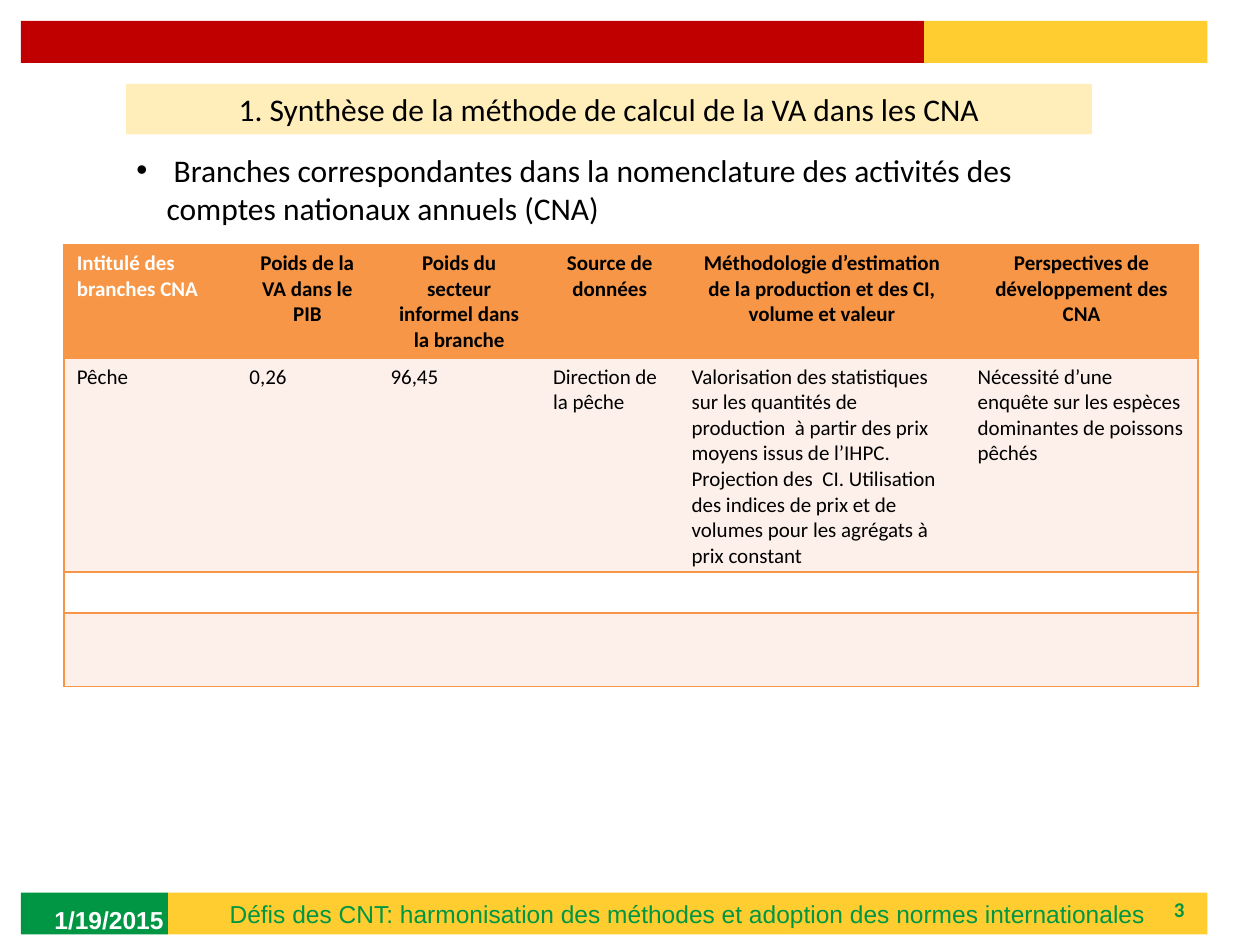
from lxml import etree
from pptx import Presentation
from pptx.dml.color import RGBColor
from pptx.enum.shapes import MSO_SHAPE
from pptx.enum.text import MSO_ANCHOR, PP_ALIGN
from pptx.oxml.ns import qn
from pptx.util import Inches, Pt

RECTANGLE = MSO_SHAPE.RECTANGLE
TOP, MIDDLE = MSO_ANCHOR.TOP, MSO_ANCHOR.MIDDLE
LEFT, CENTER, RIGHT = PP_ALIGN.LEFT, PP_ALIGN.CENTER, PP_ALIGN.RIGHT

GREEN = RGBColor(0x00, 0x96, 0x44)
YELLOW = RGBColor(0xFF, 0xCD, 0x2F)
RED = RGBColor(0xC0, 0x00, 0x00)
CREAM = RGBColor(0xFF, 0xEE, 0xB9)
ORANGE = RGBColor(0xF7, 0x96, 0x46)
BLUSH = RGBColor(0xFD, 0xEF, 0xE9)
WHITE = RGBColor(0xFF, 0xFF, 0xFF)
BLACK = RGBColor(0x00, 0x00, 0x00)

GRID_COLUMNS, GRID_ROWS = 60, 45
UNIT = Inches(10) / GRID_COLUMNS

COLUMN_WIDTHS = (8.22, 6.72, 7.74, 6.6, 13.62, 11.1)
ROW_HEIGHTS = (5.4, 10.2, 1.95, 3.5)
ROW_FILLS = (ORANGE, BLUSH, WHITE, BLUSH)
BRANCH_ROWS = (
    ("Intitulé des branches CNA", "Poids de la VA dans le PIB",
     "Poids du secteur informel dans la branche", "Source de données",
     "Méthodologie d’estimation de la production et des CI, volume et valeur",
     "Perspectives de développement des CNA"),
    ("Pêche", "0,26", "96,45", "Direction de la pêche",
     "Valorisation des statistiques sur les quantités de production  à partir "
     "des prix moyens issus de l’IHPC. Projection des  CI. Utilisation des "
     "indices de prix et de volumes pour les agrégats à prix constant",
     "Nécessité d’une enquête sur les espèces dominantes de poissons pêchés"),
    ("",) * len(COLUMN_WIDTHS),
    ("",) * len(COLUMN_WIDTHS),
)


def grid(*lengths):
    """Turn grid units into slide lengths."""
    return [round(length * UNIT) for length in lengths]


def style_para(para, size, color, name="Calibri", bold=False, align=LEFT):
    """Set the font and alignment of a paragraph."""
    para.alignment = align
    font = para.font
    font.size, font.name, font.bold = Pt(size), name, bold
    font.color.rgb = color


def add_block(page, box, fill):
    """Add a plain filled rectangle."""
    block = page.shapes.add_shape(RECTANGLE, *grid(*box))
    block.shadow.inherit = False
    block.fill.solid()
    block.fill.fore_color.rgb = fill
    block.line.fill.background()
    return block


def write(shape, text, anchor=MIDDLE, **style):
    """Put one styled paragraph in a shape and return it."""
    frame = shape.text_frame
    frame.word_wrap = True
    frame.vertical_anchor = anchor
    para = frame.paragraphs[0]
    para.text = text
    style_para(para, **style)
    return para


def add_top_band(page, box):
    """Add the red and yellow band."""
    left, top, width, height = box
    split = 43
    add_block(page, (left, top, split, height), RED)
    add_block(page, (left + split, top, width - split, height), YELLOW)


def add_footer(page, box):
    """Add the footer band with its date, subject and page number."""
    left, top, width, height = box
    split = 7
    add_block(page, (left, top, split, height), GREEN)
    subject = add_block(page, (left + split, top, width - split, height), YELLOW)
    write(subject, "Défis des CNT: harmonisation des méthodes et adoption des "
          "normes internationales", size=14, color=GREEN, name="Arial", align=CENTER)
    number = page.shapes.add_textbox(*grid(left + 42, top, 14, 1.6))
    write(number, "3", size=12, color=GREEN, bold=True, align=RIGHT)
    date = page.shapes.add_textbox(*grid(left + 1, top + 0.1, 14, 2.4))
    write(date, "1/19/2015", size=14, color=WHITE, name="Arial", bold=True)


def add_heading(page, box):
    """Add the title bar and the bulleted line under it."""
    left, top, width, height = box
    title = add_block(page, (left, top, width, 2.4), CREAM)
    write(title, "1. Synthèse de la méthode de calcul de la VA dans les CNA",
          TOP, size=18, color=BLACK, align=CENTER)
    body = add_block(page, (left - 0.1, top + 2.9, width, height - 2.9), WHITE)
    props = body.text_frame.paragraphs[0]._p.get_or_add_pPr()
    indent = Inches(0.24)
    props.set("marL", str(indent))
    props.set("indent", str(-indent))
    etree.SubElement(props, qn("a:buFont"), typeface="Arial")
    etree.SubElement(props, qn("a:buChar"), char="•")
    write(body, " Branches correspondantes dans la nomenclature des activités "
          "des comptes nationaux annuels (CNA)", TOP, size=18, color=BLACK)


def border_cell(cell, sides):
    """Draw orange lines on the given sides and none on the others."""
    props = cell._tc.get_or_add_tcPr()
    for side in "LRTB":
        line = etree.SubElement(props, qn(f"a:ln{side}"), w=str(Pt(1)))
        if side in sides:
            fill = etree.SubElement(line, qn("a:solidFill"))
            etree.SubElement(fill, qn("a:srgbClr"), val=str(ORANGE))
        else:
            etree.SubElement(line, qn("a:noFill"))


def add_branch_table(page, box):
    """Add the table of branches."""
    last = len(COLUMN_WIDTHS) - 1
    table = page.shapes.add_table(len(ROW_HEIGHTS), last + 1, *grid(*box)).table
    table.first_row = table.horz_banding = False
    for column, width in zip(table.columns, grid(*COLUMN_WIDTHS)):
        column.width = width
    for row, height in zip(table.rows, grid(*ROW_HEIGHTS)):
        row.height = height
    for r, (texts, fill) in enumerate(zip(BRANCH_ROWS, ROW_FILLS)):
        for c, text in enumerate(texts):
            cell = table.cell(r, c)
            border_cell(cell, "TB" + "L" * (c == 0) + "R" * (c == last))
            cell.fill.solid()
            cell.fill.fore_color.rgb = fill
            cell.text = text
            header = r == 0
            style_para(cell.text_frame.paragraphs[0], 12,
                       WHITE if header and c == 0 else BLACK, bold=header,
                       align=CENTER if header and c else LEFT)


def main():
    """Build and save the deck."""
    deck = Presentation()
    deck.slide_width, deck.slide_height = grid(GRID_COLUMNS, GRID_ROWS)
    page = deck.slides.add_slide(deck.slide_layouts[6])
    add_footer(page, (1, 42.5, 56.5, 2))
    add_top_band(page, (1, 1, 56.5, 2))
    add_heading(page, (6, 4, 46, 7.15))
    add_branch_table(page, (3.06, 11.64, sum(COLUMN_WIDTHS), sum(ROW_HEIGHTS)))
    deck.save("out.pptx")


if __name__ == "__main__":
    main()
